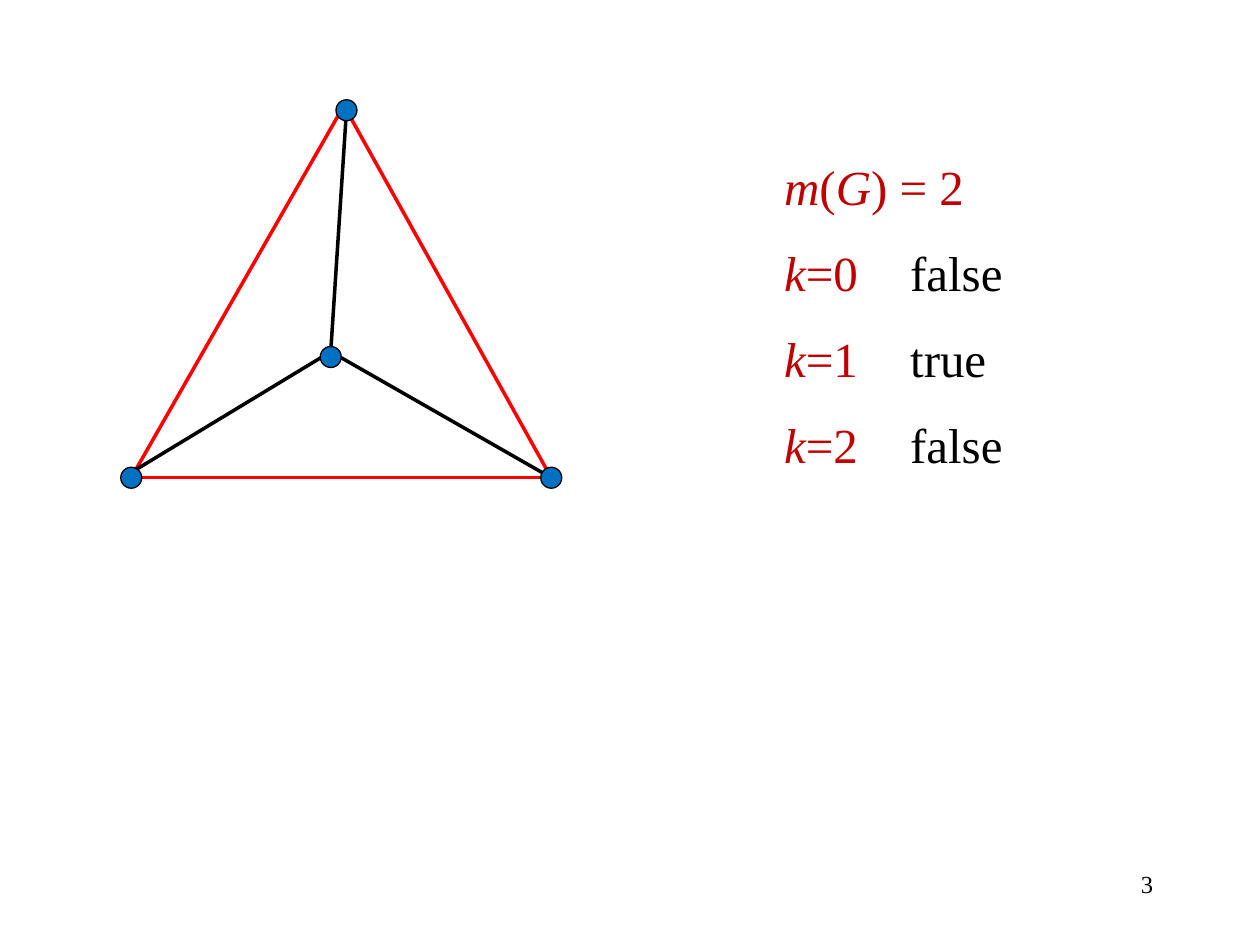
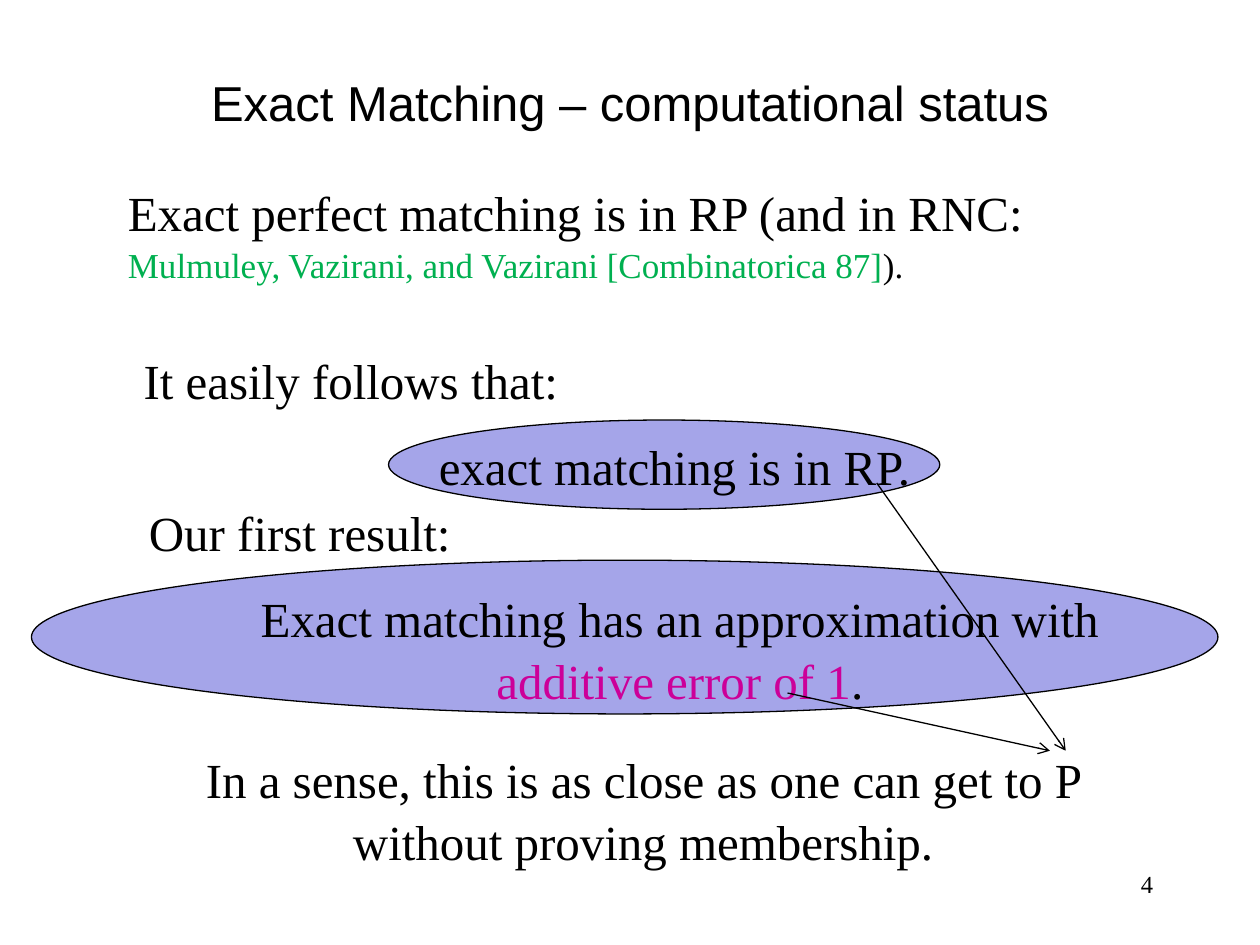
from dataclasses import dataclass

from lxml.etree import SubElement
from pptx import Presentation
from pptx.dml.color import RGBColor
from pptx.enum.shapes import MSO_CONNECTOR, MSO_SHAPE
from pptx.enum.text import PP_ALIGN
from pptx.oxml.ns import qn
from pptx.util import Inches, Pt

BLACK = RGBColor(0x00, 0x00, 0x00)
RED = RGBColor(0xFF, 0x00, 0x00)
DARK_RED = RGBColor(0xC0, 0x00, 0x00)
GREEN = RGBColor(0x00, 0xB0, 0x50)
MAGENTA = RGBColor(0xCC, 0x00, 0x99)
NODE_BLUE = RGBColor(0x00, 0x70, 0xC0)
LAVENDER = RGBColor(0xA5, 0xA5, 0xE9)

SERIF = "Times New Roman"
SANS = "Arial"
BODY_SIZE = 28
COLUMNS, ROWS = 240, 180
CELL = Inches(10) / COLUMNS
LINE_BREAK = "\n"


@dataclass
class Box:
    """A rectangle in grid columns and rows."""

    column: float
    row: float
    columns: float
    rows: float

    def inner(self, column, row, columns, rows):
        """Return a box placed relative to this one."""
        return Box(self.column + column, self.row + row, columns, rows)

    def point(self, column, row):
        """Return a slide position relative to this box."""
        return round((self.column + column) * CELL), round((self.row + row) * CELL)

    def frame(self):
        """Return left, top, width and height as slide lengths."""
        size = round(self.columns * CELL), round(self.rows * CELL)
        return *self.point(0, 0), *size


@dataclass
class Piece:
    """A stretch of text in one format."""

    text: str
    color: RGBColor = BLACK
    size: float = BODY_SIZE
    italic: bool = False
    font: str = SERIF


def add_paragraph(paragraph, pieces, alignment, indent):
    """Fill a paragraph with formatted pieces and line breaks."""
    paragraph.alignment = alignment
    paragraph.line_spacing = 1.05
    if indent:
        paragraph._p.get_or_add_pPr().set("marL", str(Inches(indent)))
    for piece in pieces:
        if piece == LINE_BREAK:
            paragraph.add_line_break()
            continue
        run = paragraph.add_run()
        run.text = piece.text
        run.font.name = piece.font
        run.font.size = Pt(piece.size)
        run.font.italic = piece.italic
        run.font.color.rgb = piece.color


def add_text(slide, box, paragraphs, alignments=(PP_ALIGN.LEFT,), indent=0):
    """Place a text box; the last alignment holds for all further paragraphs."""
    text_frame = slide.shapes.add_textbox(*box.frame()).text_frame
    text_frame.word_wrap = True
    for index, pieces in enumerate(paragraphs):
        paragraph = text_frame.add_paragraph() if index else text_frame.paragraphs[0]
        alignment = alignments[min(index, len(alignments) - 1)]
        add_paragraph(paragraph, pieces, alignment, indent)
        if index:
            paragraph.space_before = Pt(BODY_SIZE / 2)


def add_ellipse(slide, box, color):
    """Draw a filled ellipse with a thin black outline."""
    ellipse = slide.shapes.add_shape(MSO_SHAPE.OVAL, *box.frame())
    ellipse.shadow.inherit = False
    ellipse.fill.solid()
    ellipse.fill.fore_color.rgb = color
    ellipse.line.color.rgb = BLACK
    ellipse.line.width = Pt(0.75)


def add_line(slide, box, start, end, color=BLACK, width=0.75, arrow=False):
    """Draw a straight line between two points of a box."""
    connector = slide.shapes.add_connector(
        MSO_CONNECTOR.STRAIGHT, *box.point(*start), *box.point(*end)
    )
    connector.line.color.rgb = color
    connector.line.width = Pt(width)
    properties = connector._element.spPr
    if arrow:
        SubElement(properties.find(qn("a:ln")), qn("a:tailEnd"), type="arrow")
    SubElement(properties, qn("a:effectLst"))


def add_slide(presentation, page, number):
    """Add a blank slide with its page number."""
    slide = presentation.slides.add_slide(presentation.slide_layouts[6])
    number_box = page.inner(172, 164, 50, 12)
    add_text(slide, number_box, [[Piece(str(number), size=14)]], (PP_ALIGN.RIGHT,))
    return slide


def draw_graph(slide, box):
    """Draw the four-vertex graph with red outer and black inner edges."""
    edges = [
        ((2, 72), (42, 2), RED),
        ((82, 72), (43, 2), RED),
        ((3, 72), (82, 72), RED),
        ((2, 71), (40, 48), BLACK),
        ((40, 48), (43, 2), BLACK),
        ((82, 72), (40, 48), BLACK),
    ]
    for start, end, color in edges:
        add_line(slide, box, start, end, color, width=2)
    for column, row in [(43, 2), (40, 49), (82, 72), (2, 72)]:
        add_ellipse(slide, box.inner(column - 2, row - 2, 4, 4), NODE_BLUE)


def write_answers(slide, box):
    """List the matching number and the answer for each k."""
    matching = [
        Piece("m", DARK_RED, italic=True),
        Piece("(", DARK_RED),
        Piece("G", DARK_RED, italic=True),
        Piece(") = 2", DARK_RED),
    ]
    answers = [
        [Piece("k", DARK_RED, italic=True), Piece(f"={k}", DARK_RED), Piece(f"\t{answer}")]
        for k, answer in enumerate(["false", "true", "false"])
    ]
    add_text(slide, box, [matching, *answers])


def write_status(slide, box):
    """Write the known results and the first new result over their ellipses."""
    add_ellipse(slide, box.inner(-4, 73.7, 226, 29.3), LAVENDER)
    add_ellipse(slide, box.inner(64, 47, 105, 17), LAVENDER)
    known = [
        Piece("Exact perfect matching is in RP (and in RNC:"),
        LINE_BREAK,
        Piece("Mulmuley, Vazirani, and Vazirani [Combinatorica 87]", GREEN, 20),
        Piece(").", size=20),
    ]
    consequence = [
        [Piece("It easily follows that:")],
        [Piece("exact matching is in RP.")],
    ]
    result = [
        [Piece("Our first result:")],
        [
            Piece("Exact matching has an approximation with"),
            LINE_BREAK,
            Piece("additive error of 1", MAGENTA),
            Piece("."),
        ],
    ]
    statements = [
        (0, 0, 22, [known]),
        (3, 32, 31, consequence),
        (4, 61, 42, result),
    ]
    for column, row, rows, paragraphs in statements:
        statement_box = box.inner(column, row, box.columns, rows)
        add_text(slide, statement_box, paragraphs, (PP_ALIGN.LEFT, PP_ALIGN.CENTER), 0.5)


def write_conclusion(slide, box):
    """Write the closing remark and the arrows that lead to it."""
    remark = "In a sense, this is as close as one can get to P without proving membership."
    add_text(slide, box, [[Piece(remark)]], (PP_ALIGN.CENTER,))
    for start, end in [((143, -49), (179, 2)), ((126, -9), (176, 2))]:
        add_line(slide, box, start, end, arrow=True)


def build_example_slide(presentation, page):
    """Build the slide with the example graph."""
    slide = add_slide(presentation, page, 3)
    draw_graph(slide, page.inner(23, 19, 84, 74))
    write_answers(slide, page.inner(147, 28, 76, 64.5))


def build_status_slide(presentation, page):
    """Build the slide on the computational status."""
    slide = add_slide(presentation, page, 4)
    title = Piece("Exact Matching – computational status", font=SANS)
    add_text(slide, page.inner(11, 12, 218, 13.7), [[title]], (PP_ALIGN.CENTER,))
    write_status(slide, page.inner(10, 33, 219, 103))
    write_conclusion(slide, page.inner(24, 141, 197, 25))


def main():
    """Build and save the presentation."""
    presentation = Presentation()
    presentation.slide_width = Inches(10)
    presentation.slide_height = Inches(7.5)
    page = Box(0, 0, COLUMNS, ROWS)
    build_example_slide(presentation, page)
    build_status_slide(presentation, page)
    presentation.save("out.pptx")


if __name__ == "__main__":
    main()
